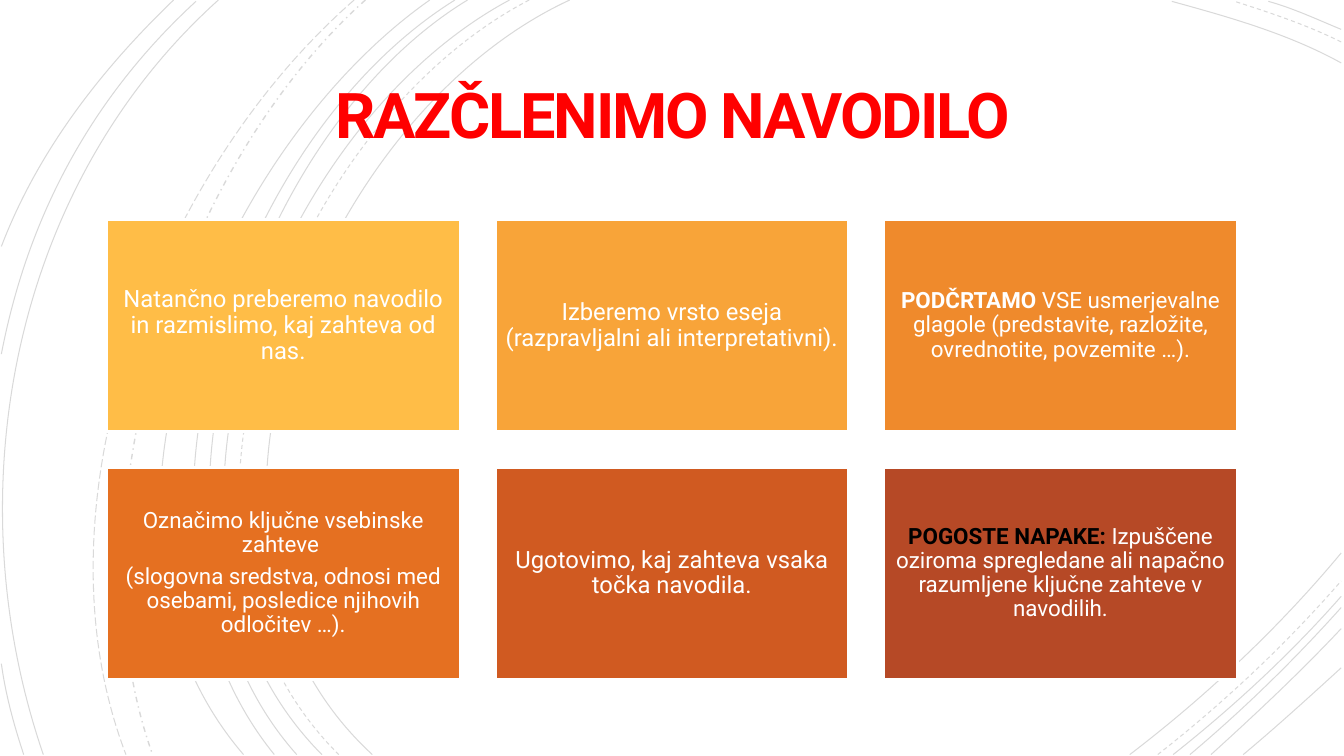
import pptx
import pptx.util
import pptx.dml.color
import pptx.enum.dml
import pptx.enum.shapes
import pptx.enum.text
import pptx.oxml.ns
import lxml.etree

Pt = pptx.util.Pt
DASH = pptx.enum.dml.MSO_LINE

TITLE = "RAZČLENIMO NAVODILO"
FONT = "Roboto"
WHITE = "FFFFFF"
ARC_COLOR = "000000"
ARC_OPACITY = 15

CARDS = [
    ("FFBD47", 17, [[("Natančno preberemo navodilo in razmislimo, kaj zahteva od nas.", {})]]),
    ("F8A439", 17, [[("Izberemo vrsto eseja (razpravljalni ali interpretativni).", {})]]),
    ("EF8A2C", 16, [[
        ("PODČRTAMO", {"bold": True}),
        (" VSE usmerjevalne glagole (predstavite, razložite, ovrednotite, povzemite …).", {}),
    ]]),
    ("E57021", 16, [
        [("Označimo ključne vsebinske zahteve ", {})],
        [("(slogovna sredstva, odnosi med osebami, posledice njihovih odločitev …).", {})],
    ]),
    ("D05A21", 17, [[("Ugotovimo, kaj zahteva vsaka točka navodila.", {})]]),
    ("B64926", 16, [[
        ("POGOSTE NAPAKE: ", {"bold": True, "color": "000000"}),
        ("Izpuščene oziroma spregledane ali napačno razumljene ključne zahteve v navodilih.", {}),
    ]]),
]

ARCS = [
    (DASH.SOLID, 0.75, [
        ((407, 0), (227, 83), (103, 389), (266, 539)),
        ((958, 45), (920, 24), (877, 12), (837, 1)),
        ((807, 539), (862, 497), (914, 448), (958, 395)),
        ((364, 0), (194, 91), (79, 387), (230, 539)),
        ((958, 21), (941, 14), (924, 6), (906, 1)),
        ((838, 539), (881, 505), (922, 467), (958, 426)),
        ((334, 0), (176, 96), (79, 390), (212, 539)),
        ((850, 539), (888, 507), (924, 472), (958, 434)),
        ((325, 0), (166, 99), (70, 384), (196, 539)),
        ((865, 539), (897, 510), (929, 480), (958, 449)),
        ((307, 0), (156, 106), (38, 381), (174, 539)),
        ((888, 539), (912, 519), (935, 498), (958, 477)),
        ((156, 0), (8, 133), (-33, 353), (31, 539)),
        ((140, 1), (66, 69), (20, 154), (1, 253)),
        ((1, 474), (4, 496), (10, 518), (17, 539)),
        ((124, 0), (72, 50), (27, 108), (1, 176)),
    ]),
    (DASH.DASH, 0.75, [
        ((378, 0), (205, 90), (89, 387), (242, 539)),
        ((958, 30), (934, 18), (907, 9), (882, 1)),
        ((827, 539), (873, 503), (918, 461), (958, 415)),
    ]),
    (DASH.DASH_DOT, 1, [((261, 0), (127, 120), (47, 366), (109, 539))]),
    (DASH.LONG_DASH, 0.75, [((253, 0), (113, 122), (21, 359), (90, 539))]),
]

SLIDE_WIDTH, SLIDE_HEIGHT = 960, 540
COLUMNS = 3
CARD_LEFT, CARD_TOP = 76.1, 157
CARD_WIDTH, CARD_HEIGHT = 252.5, 151.2
COLUMN_PITCH, ROW_PITCH = 277.6, 177


def rgb(value):
    return pptx.dml.color.RGBColor.from_string(value)


def add_text(paragraph, text, size=17, color=WHITE, bold=False, spacing=None):
    run = paragraph.add_run()
    run.text = text
    run.font.name = FONT
    run.font.size = Pt(size)
    run.font.bold = bold
    run.font.color.rgb = rgb(color)
    if spacing is not None:
        run._r.get_or_add_rPr().set("spc", str(round(spacing * 100)))


def format_frame(frame, inset):
    frame.word_wrap = True
    frame.auto_size = pptx.enum.text.MSO_AUTO_SIZE.NONE
    frame.vertical_anchor = pptx.enum.text.MSO_ANCHOR.MIDDLE
    frame.margin_left = frame.margin_right = Pt(inset)
    frame.margin_top = frame.margin_bottom = Pt(inset)


def format_paragraph(paragraph, line_spacing, space_after=0):
    paragraph.alignment = pptx.enum.text.PP_ALIGN.CENTER
    paragraph.line_spacing = line_spacing
    paragraph.space_before = Pt(0)
    paragraph.space_after = Pt(space_after)


def add_rectangle(slide, left, top, width, height, fill):
    rectangle = slide.shapes.add_shape(
        pptx.enum.shapes.MSO_SHAPE.RECTANGLE, Pt(left), Pt(top), Pt(width), Pt(height)
    )
    rectangle.shadow.inherit = False
    rectangle.fill.solid()
    rectangle.fill.fore_color.rgb = rgb(fill)
    return rectangle


def bend_outline(arc):
    qn = pptx.oxml.ns.qn
    lines = list(arc._element.iter(qn("a:lnTo")))
    outline = lines[0].getparent()
    bezier = lxml.etree.SubElement(outline, qn("a:cubicBezTo"))
    for line in lines:
        bezier.append(line[0])
        outline.remove(line)


def add_arc(slide, curve, dash, width):
    points = [(Pt(x), Pt(y)) for x, y in curve]
    builder = slide.shapes.build_freeform(*points[0])
    builder.add_line_segments(points[1:], close=False)
    arc = builder.convert_to_shape()
    bend_outline(arc)
    arc.shadow.inherit = False
    arc.fill.background()
    arc.line.color.rgb = rgb(ARC_COLOR)
    arc.line.width = Pt(width)
    arc.line.dash_style = dash
    qn = pptx.oxml.ns.qn
    line_color = arc._element.spPr.find(qn("a:ln")).find(".//" + qn("a:srgbClr"))
    lxml.etree.SubElement(line_color, qn("a:alpha")).set("val", str(ARC_OPACITY * 1000))


def add_title(slide):
    title = slide.shapes.title
    title.left, title.top = Pt(139), Pt(44)
    title.width, title.height = Pt(683), Pt(83)
    format_frame(title.text_frame, 18)
    paragraph = title.text_frame.paragraphs[0]
    format_paragraph(paragraph, 0.85)
    add_text(paragraph, TITLE, size=45, color="FF0000", bold=True, spacing=-1.5)


def add_card(slide, index, fill, size, paragraphs):
    row, column = divmod(index, COLUMNS)
    card = add_rectangle(
        slide, CARD_LEFT + column * COLUMN_PITCH, CARD_TOP + row * ROW_PITCH,
        CARD_WIDTH, CARD_HEIGHT, fill,
    )
    card.line.color.rgb = rgb(WHITE)
    card.line.width = Pt(2)
    frame = card.text_frame
    format_frame(frame, 5)
    for number, runs in enumerate(paragraphs):
        paragraph = frame.add_paragraph() if number else frame.paragraphs[0]
        format_paragraph(paragraph, 0.9, space_after=size * 0.35)
        for text, style in runs:
            add_text(paragraph, text, size=size, **style)


def main():
    presentation = pptx.Presentation()
    presentation.slide_width = Pt(SLIDE_WIDTH)
    presentation.slide_height = Pt(SLIDE_HEIGHT)
    slide = presentation.slides.add_slide(presentation.slide_layouts[5])
    backdrop = add_rectangle(slide, 0, 0, SLIDE_WIDTH, SLIDE_HEIGHT, WHITE)
    backdrop.line.fill.background()
    for dash, width, curves in ARCS:
        for curve in curves:
            add_arc(slide, curve, dash, width)
    title_element = slide.shapes.title._element
    title_element.getparent().append(title_element)
    add_title(slide)
    for index, (fill, size, paragraphs) in enumerate(CARDS):
        add_card(slide, index, fill, size, paragraphs)
    presentation.save("out.pptx")


if __name__ == "__main__":
    main()
